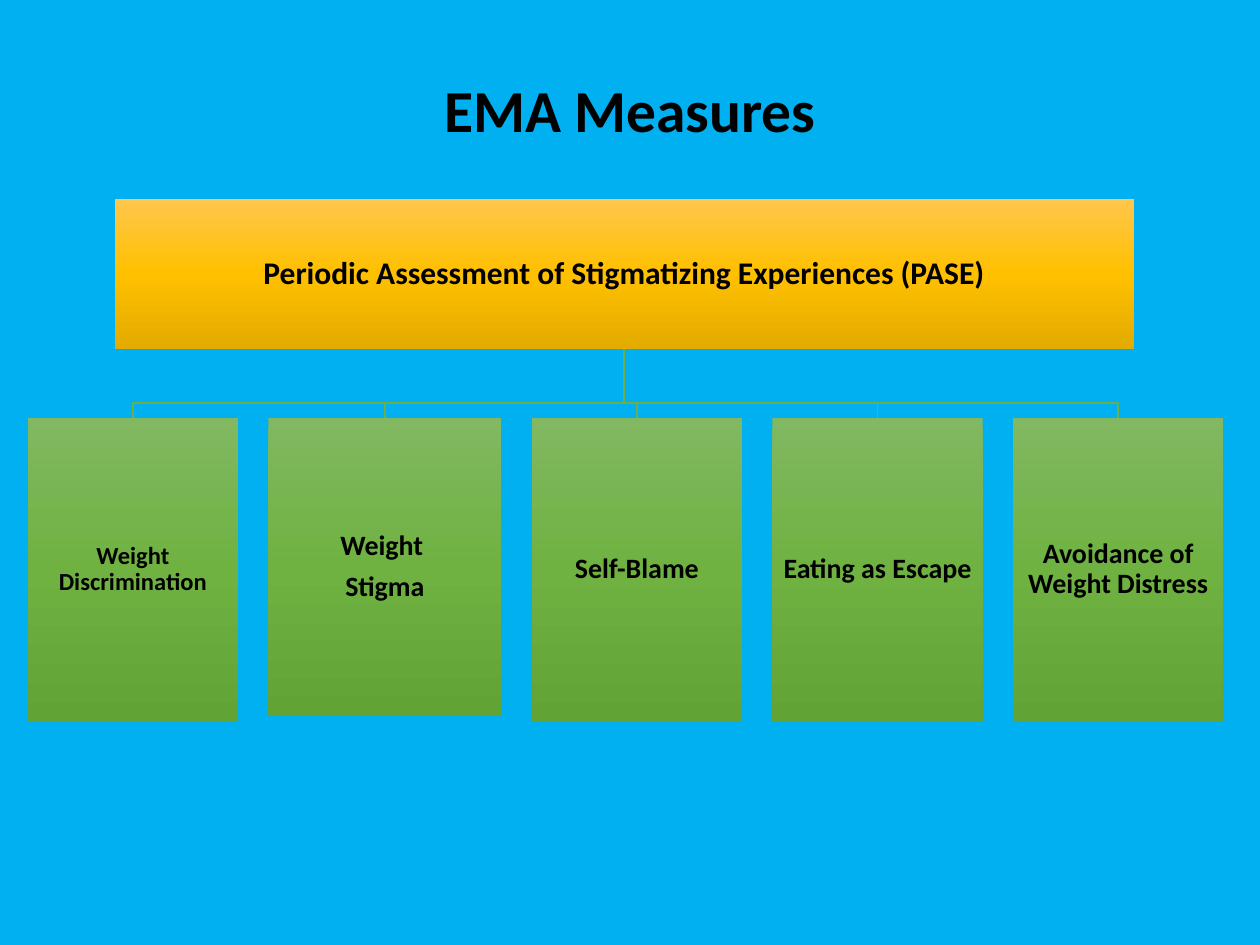
from copy import deepcopy
from dataclasses import dataclass

from pptx import Presentation
from pptx.dml.color import RGBColor
from pptx.enum.shapes import MSO_SHAPE
from pptx.enum.text import MSO_ANCHOR, PP_ALIGN
from pptx.util import Inches, Pt

RECTANGLE = MSO_SHAPE.RECTANGLE
MIDDLE = MSO_ANCHOR.MIDDLE
CENTER = PP_ALIGN.CENTER

FONT = "Calibri"
COLORS = {"background": "00B0F0", "text": "000000", "line": "70AD47"}
GRADIENTS = {
    "heading": ("FFC64B", "FFC000", "E3AB00"),
    "measure": ("81B861", "6FB242", "62A336"),
}
ROW_TOP = 3.32
ROW_LEFT = 0.22
GAP = 0.24
BUS_Y = 3.2
INSET = Inches(0.01)


@dataclass
class Measure:
    text: str
    width: float = 1.67
    height: float = 2.4
    size: int = 16


MEASURES = [
    Measure("Weight Discrimination", size=14),
    Measure("Weight \nStigma", width=1.85, height=2.36),
    Measure("Self-Blame"),
    Measure("Eating as Escape"),
    Measure("Avoidance of Weight Distress"),
]


def write_text(box, text: str, size: int, spacing: float, after: float) -> None:
    frame = box.text_frame
    frame.word_wrap = True
    frame.vertical_anchor = MIDDLE
    frame.text = text
    for para in frame.paragraphs:
        para.alignment = CENTER
        para.line_spacing = spacing
        para.space_after = Pt(after)
        for span in para.runs:
            span.font.name = FONT
            span.font.size = Pt(size)
            span.font.bold = True
            span.font.color.rgb = RGBColor.from_string(COLORS["text"])


def fill_gradient(box, colors: tuple[str, ...]) -> None:
    box.fill.gradient()
    box.fill.gradient_angle = 270
    first = box.fill._fill._gradFill.gsLst[0]
    first.addnext(deepcopy(first))
    for index, (stop, color) in enumerate(zip(box.fill.gradient_stops, colors)):
        stop.color.rgb = RGBColor.from_string(color)
        stop.position = index / (len(colors) - 1)


def add_box(page, left: float, top: float, item: Measure, gradient: str):
    box = page.shapes.add_shape(
        RECTANGLE, Inches(left), Inches(top), Inches(item.width), Inches(item.height)
    )
    box.shadow.inherit = False
    box.line.fill.background()
    fill_gradient(box, GRADIENTS[gradient])
    frame = box.text_frame
    frame.margin_left = frame.margin_right = INSET
    frame.margin_top = frame.margin_bottom = INSET
    write_text(box, item.text, item.size, 0.9, 0.35 * item.size)
    return box


def add_branch(page, start_x: float, start_y: float, end_x: float) -> None:
    builder = page.shapes.build_freeform(Inches(start_x), Inches(start_y))
    points = [(start_x, BUS_Y), (end_x, BUS_Y), (end_x, ROW_TOP)]
    builder.add_line_segments([(Inches(x), Inches(y)) for x, y in points], close=False)
    branch = builder.convert_to_shape()
    branch.shadow.inherit = False
    branch.fill.background()
    branch.line.color.rgb = RGBColor.from_string(COLORS["line"])
    branch.line.width = Pt(1)


def main() -> None:
    deck = Presentation()
    deck.slide_width, deck.slide_height = Inches(10), Inches(7.5)
    page = deck.slides.add_slide(deck.slide_layouts[6])
    page.background.fill.solid()
    page.background.fill.fore_color.rgb = RGBColor.from_string(COLORS["background"])

    title = page.shapes.add_textbox(0, Inches(0.33), deck.slide_width, Inches(0.96))
    write_text(title, "EMA Measures", 34, 1.2, 0)

    heading = Measure(
        "Periodic Assessment of Stigmatizing Experiences (PASE)", 8.09, 1.19, 18
    )
    heading_left, heading_top = 0.91, 1.58
    lefts = [
        ROW_LEFT + sum(item.width + GAP for item in MEASURES[:index])
        for index in range(len(MEASURES))
    ]
    for left, item in zip(lefts, MEASURES):
        add_branch(
            page,
            heading_left + heading.width / 2,
            heading_top + heading.height,
            left + item.width / 2,
        )
    add_box(page, heading_left, heading_top, heading, "heading")
    for left, item in zip(lefts, MEASURES):
        add_box(page, left, ROW_TOP, item, "measure")

    deck.save("out.pptx")


if __name__ == "__main__":
    main()
